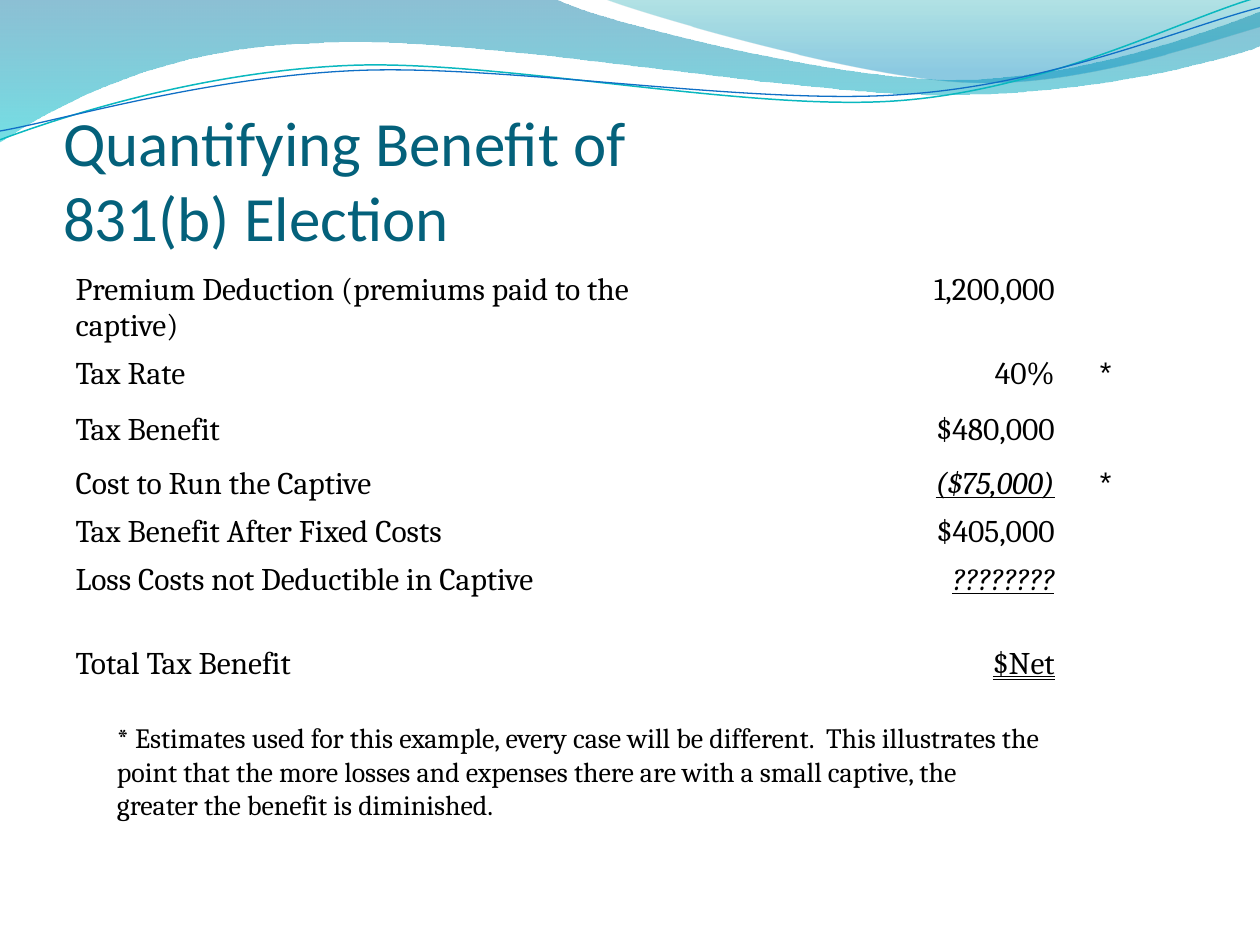
from lxml.etree import SubElement
from pptx import Presentation
from pptx.dml.color import RGBColor
from pptx.enum.text import MSO_ANCHOR, MSO_AUTO_SIZE, MSO_UNDERLINE, PP_ALIGN
from pptx.oxml.ns import qn
from pptx.util import Inches, Pt

COLORS = {
    "title": "04617B", "text": "000000", "paper": "FFFFFF",
    "deep": "0074A1", "aqua": "00C6CF", "teal": "00A1A9", "sky": "008BBF",
    "teal_line": "0AB8BF", "blue_line": "0F6FC6",
}


def write(paragraph, text, size=18, font="Cambria", color="text",
          align=PP_ALIGN.LEFT, italic=False, underline=False):
    paragraph.alignment = align
    paragraph.text = text
    for span in paragraph.runs:
        span.font.size = Pt(size)
        span.font.name = font
        span.font.color.rgb = RGBColor.from_string(COLORS[color])
        span.font.bold = False
        span.font.italic = italic
        span.font.underline = underline


def draw_wave(page, start, pieces, closed):
    """Two numbers make a straight piece, six a Bezier curve."""
    corners = [(Inches(piece[i]), Inches(piece[i + 1]))
               for piece in pieces for i in range(0, len(piece), 2)]
    builder = page.shapes.build_freeform(Inches(start[0]), Inches(start[1]))
    builder.add_line_segments(corners, close=closed)
    shape = builder.convert_to_shape()
    shape.shadow.inherit = False
    # Gather each three points of a curve into one Bezier segment
    segments = iter(list(shape._element.iter(qn("a:lnTo"))))
    for piece in pieces:
        group = [next(segments) for _ in range(len(piece) // 2)]
        if len(group) == 3:
            outline = group[0].getparent()
            curve = SubElement(outline, qn("a:cubicBezTo"))
            outline.replace(group[0], curve)
            for segment in group:
                curve.append(segment[0])
            for segment in group[1:]:
                outline.remove(segment)
    return shape


deck = Presentation()
deck.slide_width, deck.slide_height = Inches(10), Inches(7.5)
page = deck.slides.add_slide(deck.slide_layouts[5])

# Filled waves: start, pieces, gradient stops (position, colour, opacity %)
bands = [
    ((0, 0),
     [(4.4, -0.01), (4.76, 0.17, 6.64, 0.63, 7.58, 0.63), (8.53, 0.63, 9.58, 0.26, 10, 0.09),
      (10.01, 0.36), (9.83, 0.44, 8.7, 0.76, 7.46, 0.75), (6.22, 0.75, 3.82, 0.28, 2.57, 0.34),
      (1.29, 0.36, 0.46, 0.83, -0.01, 1.13)],
     [(0, "deep", 45), (1, "aqua", 55)]),
    ((4.79, -0.01),
     [(5.09, 0.11, 6.82, 0.62, 7.69, 0.65), (8.56, 0.69, 9.61, 0.32, 10, 0.21), (10, 0)],
     [(0, "teal", 30), (0.8, "sky", 45)]),
]
for start, pieces, stops in bands:
    band = draw_wave(page, start, pieces, closed=True)
    band.line.fill.background()
    band.fill.gradient()
    band.fill.gradient_angle = 270
    for stop, (position, color, _) in zip(band.fill.gradient_stops, stops):
        stop.position = position
        stop.color.rgb = RGBColor.from_string(COLORS[color])
    for tint, (_, _, opacity) in zip(band._element.spPr.iter(qn("a:srgbClr")), stops):
        SubElement(tint, qn("a:alpha"), val=str(opacity * 1000))

# Thin wave lines
strands = [
    ((0, 1.11), [(0.48, 0.93, 1.58, 0.57, 2.77, 0.52), (3.95, 0.47, 5.93, 0.89, 7.13, 0.8),
                 (8.33, 0.71, 9.38, 0.15, 9.98, -0.02)], "teal_line", 0.85),
    ((0, 1.04), [(0.47, 0.96, 1.64, 0.61, 2.83, 0.56), (4.03, 0.51, 5.97, 0.84, 7.17, 0.75),
                 (8.36, 0.67, 9.41, 0.21, 10, 0.06)], "blue_line", 0.75),
]
for start, pieces, color, width in strands:
    strand = draw_wave(page, start, pieces, closed=False)
    strand.fill.background()
    strand.line.color.rgb = RGBColor.from_string(COLORS[color])
    strand.line.width = Pt(width)

# Title, in front of the waves
title = page.shapes.title
page.shapes._spTree.append(title._element)
title.left, title.top, title.width, title.height = map(Inches, (0.5, 0.77, 9, 1.25))
frame = title.text_frame
frame.auto_size = MSO_AUTO_SIZE.NONE
frame.vertical_anchor = MSO_ANCHOR.BOTTOM
frame.margin_left = frame.margin_right = frame.margin_bottom = 0
frame.margin_top = Inches(0.05)
write(frame.paragraphs[0], "Quantifying Benefit of\v831(b) Election",
      size=36, font="Calibri", color="title")

# Benefit table: height, label, amount, mark, amount style
entry = {"italic": True, "underline": True}
rows = [
    (0.67, "Premium Deduction (premiums paid to the captive)", "1,200,000", "", {}),
    (0.44, "Tax Rate", "40%", "*", {}),
    (0.43, "Tax Benefit", "$480,000", "", {}),
    (0.38, "Cost to Run the Captive", "($75,000)", "*", entry),
    (0.38, "Tax Benefit After Fixed Costs", "$405,000", "", {}),
    (0.38, "Loss Costs not Deductible in Captive", "????????", "", entry),
    (0.81, "Total Tax Benefit", "$Net", "", {"underline": MSO_UNDERLINE.DOUBLE_LINE}),
]
table = page.shapes.add_table(len(rows), 4, Inches(0.5), Inches(2.12),
                              Inches(8.42), Inches(3.49)).table
for column, width in zip(table.columns, (4.68, 0.23, 3.05, 0.45)):
    column.width = Inches(width)
for index, (height, label, amount, mark, style) in enumerate(rows):
    table.rows[index].height = Inches(height)
    formats = [{}, {}, {"align": PP_ALIGN.RIGHT, **style},
               {"align": PP_ALIGN.RIGHT, "size": 17, "font": "Arial"}]
    for cell, text, options in zip(table.rows[index].cells, (label, "", amount, mark), formats):
        cell.fill.solid()
        cell.fill.fore_color.rgb = RGBColor.from_string(COLORS["paper"])
        cell.margin_right = Inches(0.09)
        cell.margin_top = cell.margin_bottom = Inches(0.04 if text else 0)
        if text:
            write(cell.text_frame.paragraphs[0], text, **options)
        if text and index == len(rows) - 1:
            cell.margin_top = Inches(0.33)  # sets the total apart

# Footnote
box = page.shapes.add_textbox(Inches(0.83), Inches(5.67), Inches(7.55), Inches(0.91))
box.text_frame.word_wrap = True
box.text_frame.auto_size = MSO_AUTO_SIZE.SHAPE_TO_FIT_TEXT
write(box.text_frame.paragraphs[0],
      "* Estimates used for this example, every case will be different.  This illustrates "
      "the point that the more losses and expenses there are with a small captive, the "
      "greater the benefit is diminished.", size=16)

deck.save("out.pptx")
